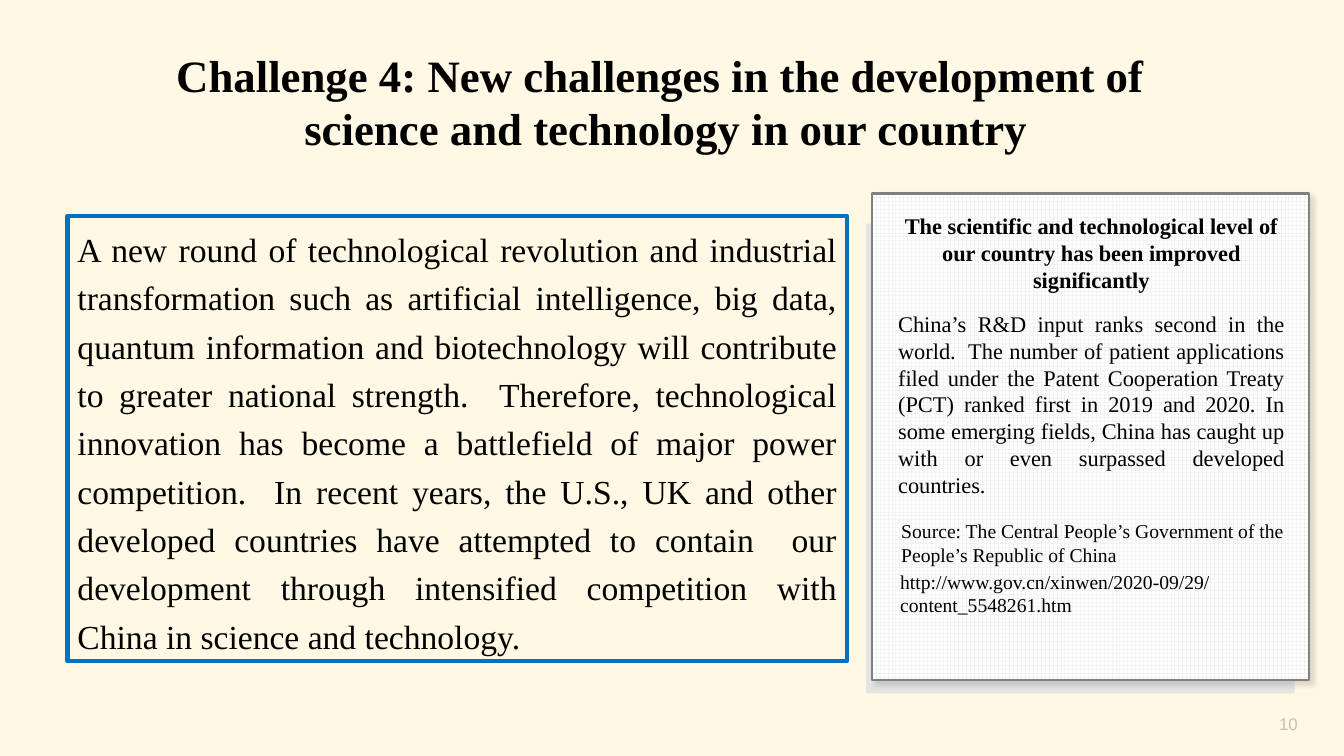
import lxml.etree
import pptx
import pptx.dml.color
import pptx.enum.dml
import pptx.enum.shapes
import pptx.enum.text
import pptx.oxml.ns
import pptx.util

Inches = pptx.util.Inches
Pt = pptx.util.Pt
RGBColor = pptx.dml.color.RGBColor
Shape = pptx.enum.shapes.MSO_SHAPE
Align = pptx.enum.text.PP_ALIGN
Anchor = pptx.enum.text.MSO_ANCHOR
Fit = pptx.enum.text.MSO_AUTO_SIZE
qn = pptx.oxml.ns.qn

CREAM = RGBColor(0xFF, 0xF8, 0xE5)
BLACK = RGBColor(0, 0, 0)
WHITE = RGBColor(0xFF, 0xFF, 0xFF)
BLUE = RGBColor(0x00, 0x70, 0xC0)
TINT = RGBColor(0x44, 0x72, 0xC4)
GRID = RGBColor(0xF2, 0xF2, 0xF2)
GRAY = RGBColor(0x80, 0x80, 0x80)
PALE = RGBColor(0xC6, 0xBF, 0xAC)
SERIF = "Times New Roman"
SANS = "Arial"

TITLE = ["Challenge 4: New challenges in the development of ",
         "science and technology in our country"]
BODY = (
    "A new round of technological revolution and industrial transformation "
    "such as artificial intelligence, big data, quantum information and "
    "biotechnology will contribute to greater national strength.  Therefore, "
    "technological innovation has become a battlefield of major power "
    "competition.  In recent years, the U.S., UK and other developed countries "
    "have attempted to contain  our development through intensified "
    "competition with China in science and technology. ")
HEAD = ("The scientific and technological level of our country has been "
        "improved significantly")
FACTS = (
    "China’s R&D input ranks second in the world.  The number of patient "
    "applications filed under the Patent Cooperation Treaty (PCT) ranked first "
    "in 2019 and 2020. In some emerging fields, China has caught up with or "
    "even surpassed developed countries. ")
SOURCE = ("Source: The Central People’s Government of the "
          "People’s Republic of China")
LINK = "http://www.gov.cn/xinwen/2020-09/29/content_5548261.htm"


def place(shape, box):
    shape.left, shape.top, shape.width, shape.height = map(Inches, box)


def write(shape, texts, size, align=Align.LEFT, bold=False, font=SERIF,
          color=BLACK, anchor=Anchor.TOP):
    """Fill a shape with one paragraph per text and return the paragraphs."""
    frame = shape.text_frame
    frame.word_wrap = True
    frame.auto_size = Fit.NONE
    frame.vertical_anchor = anchor
    frame.text = "\n".join(texts)
    for para in frame.paragraphs:
        para.alignment = align
        para.font.name = font
        para.font.size = Pt(size)
        para.font.bold = bold
        para.font.color.rgb = color
    return frame.paragraphs


def add_text(slide, box, texts, size, **style):
    shape = slide.shapes.add_textbox(*map(Inches, box))
    return write(shape, texts, size, **style)


def add_box(slide, kind, box, line=None, width=0):
    """Add an unfilled shape, outlined only if a line colour is given."""
    shape = slide.shapes.add_shape(kind, *map(Inches, box))
    shape.shadow.inherit = False
    shape.fill.background()
    if line is None:
        shape.line.fill.background()
    else:
        shape.line.color.rgb = line
        shape.line.width = Pt(width)
    return shape


def set_alpha(color, percent):
    lxml.etree.SubElement(color, qn("a:alpha"), val=str(percent * 1000))


def add_shadow(shape, alpha, blur, dist, angle):
    effects = shape.element.spPr.find(qn("a:effectLst"))
    outer = lxml.etree.SubElement(
        effects, qn("a:outerShdw"), blurRad=str(Pt(blur)), dist=str(Pt(dist)),
        dir=str(angle * 60000), algn="tl", rotWithShape="0")
    color = lxml.etree.SubElement(outer, qn("a:srgbClr"), val=str(BLACK))
    set_alpha(color, alpha)


def add_panel(slide):
    back = add_box(slide, Shape.ROUNDED_RECTANGLE, (8.59, 2.22, 4.25, 4.66))
    back.adjustments[0] = 0
    back.fill.solid()
    back.fill.fore_color.rgb = TINT
    set_alpha(back.element.spPr.find(qn("a:solidFill"))[0], 14)

    card = add_box(slide, Shape.RECTANGLE, (8.65, 1.92, 4.33, 4.83), GRAY, 1.5)
    card.fill.patterned()
    card.fill.pattern = pptx.enum.dml.MSO_PATTERN.LARGE_GRID
    card.fill.fore_color.rgb = GRID
    card.fill.back_color.rgb = WHITE
    add_shadow(card, 13, 4, 3, 45)

    head, facts = add_text(slide, (8.81, 2.06, 4.03, 2.96), [HEAD, FACTS], 16)
    head.alignment = Align.CENTER
    head.font.bold = True
    facts.alignment = Align.JUSTIFY
    facts.space_before = Pt(12)
    add_text(slide, (8.84, 5.1, 4.19, 0.57), [SOURCE], 14)
    add_text(slide, (8.83, 5.6, 4, 0.57), [LINK], 14)


def main():
    deck = pptx.Presentation()
    deck.slide_width = Inches(13.33)
    deck.slide_height = Inches(7.5)
    slide = deck.slides.add_slide(deck.slide_layouts.get_by_name("Title Only"))
    slide.background.fill.solid()
    slide.background.fill.fore_color.rgb = CREAM

    title = slide.shapes.title
    place(title, (0.87, 0.42, 11.47, 1.18))
    write(title, TITLE, 32, Align.CENTER, bold=True)

    add_panel(slide)
    body = add_box(slide, Shape.RECTANGLE, (0.67, 2.14, 7.73, 4.42), BLUE, 3)
    write(body, [BODY], 24, Align.JUSTIFY)[0].line_spacing = 1.2
    add_text(slide, (9.97, 6.98, 3, 0.4), ["10"], 12, align=Align.RIGHT,
             font=SANS, color=PALE, anchor=Anchor.MIDDLE)
    deck.save("out.pptx")


if __name__ == "__main__":
    main()
